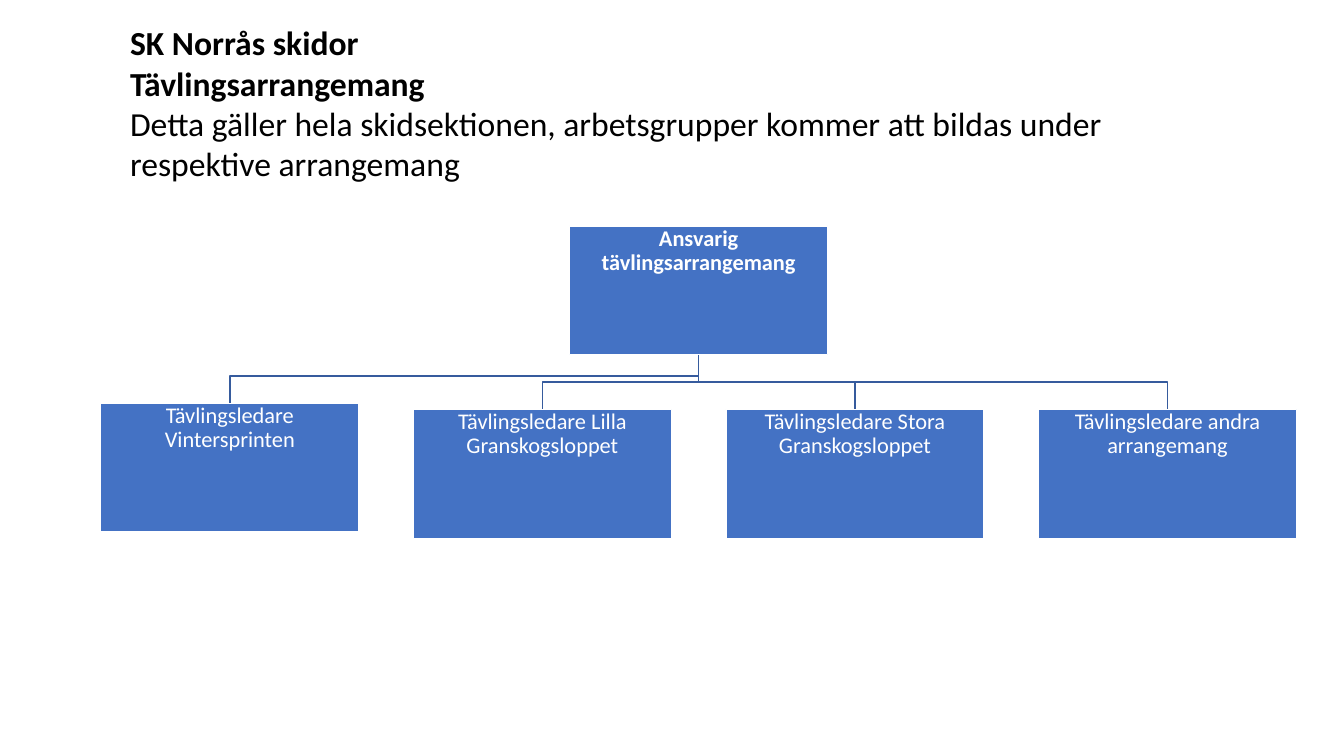
from pptx import Presentation
from pptx.dml.color import RGBColor
from pptx.enum.shapes import MSO_SHAPE
from pptx.enum.text import MSO_ANCHOR, MSO_AUTO_SIZE, PP_ALIGN
from pptx.util import Inches, Pt

COLOURS = {"box": "4472C4", "branch": "365B9D", "white": "FFFFFF", "black": "000000"}
BOX_WIDTH, BOX_HEIGHT = 2.56, 1.28
BRANCH_DROP = 0.27

HEADING = [
    ("SK Norrås skidor", True),
    ("Tävlingsarrangemang", True),
    ("Detta gäller hela skidsektionen, arbetsgrupper kommer att bildas "
     "under respektive arrangemang", False),
]
MANAGER = "Ansvarig tävlingsarrangemang"
LEADERS = [
    "Tävlingsledare Vintersprinten",
    "Tävlingsledare Lilla Granskogsloppet",
    "Tävlingsledare Stora Granskogsloppet",
    "Tävlingsledare andra arrangemang",
]


def colour(name):
    return RGBColor.from_string(COLOURS[name])


def write(para, text, size, ink, bold=False, align=PP_ALIGN.LEFT, spacing=1.0, after=0):
    para.alignment = align
    para.line_spacing = spacing
    para.space_before = Pt(0)
    para.space_after = Pt(after)
    span = para.add_run()
    span.text = text
    span.font.name = "Calibri"
    span.font.size = Pt(size)
    span.font.bold = bold
    span.font.color.rgb = colour(ink)


def add_heading(page, left, top, width, height):
    title = page.shapes.title
    title.left, title.top = Inches(left), Inches(top)
    title.width, title.height = Inches(width), Inches(height)
    frame = title.text_frame
    frame.word_wrap = True
    frame.auto_size = MSO_AUTO_SIZE.NONE
    frame.vertical_anchor = MSO_ANCHOR.TOP
    for index, (text, bold) in enumerate(HEADING):
        para = frame.add_paragraph() if index else frame.paragraphs[0]
        write(para, text, 24, "black", bold=bold)


def add_role(page, left, top, text, bold=False):
    box = page.shapes.add_shape(MSO_SHAPE.RECTANGLE, Inches(left), Inches(top),
                                Inches(BOX_WIDTH), Inches(BOX_HEIGHT))
    box.shadow.inherit = False
    box.fill.solid()
    box.fill.fore_color.rgb = colour("box")
    box.line.color.rgb = colour("white")
    box.line.width = Pt(1)
    frame = box.text_frame
    frame.word_wrap = True
    frame.vertical_anchor = MSO_ANCHOR.TOP
    frame.margin_left = frame.margin_right = Inches(0.01)
    frame.margin_top = frame.margin_bottom = Inches(0.01)
    write(frame.paragraphs[0], text, 16, "white", bold=bold,
          align=PP_ALIGN.CENTER, spacing=0.9, after=5.6)


def add_branch(page, start_x, start_y, end_x, end_y):
    """Draw a line that goes down, across and down again to a lower box."""
    turn_y = end_y - BRANCH_DROP
    corners = [(start_x, turn_y), (end_x, turn_y), (end_x, end_y)]
    builder = page.shapes.build_freeform(Inches(start_x), Inches(start_y))
    builder.add_line_segments([(Inches(x), Inches(y)) for x, y in corners], close=False)
    branch = builder.convert_to_shape()
    branch.shadow.inherit = False
    branch.fill.background()
    branch.line.color.rgb = colour("branch")
    branch.line.width = Pt(1)


def add_chart_of_roles(page, left, top, pitch=3.1):
    """Place the manager centred above a row of leaders."""
    manager_left = left + pitch * (len(LEADERS) - 1) / 2
    centre = BOX_WIDTH / 2
    # The first leader sits slightly higher than the others.
    leaders = [(left + index * pitch, top + (1.82 if index else 1.76), text)
               for index, text in enumerate(LEADERS)]
    for x, y, _ in reversed(leaders):
        add_branch(page, manager_left + centre, top + BOX_HEIGHT, x + centre, y)
    add_role(page, manager_left, top, MANAGER, bold=True)
    for x, y, text in leaders:
        add_role(page, x, y, text)


def main():
    deck = Presentation()
    deck.slide_width, deck.slide_height = Inches(13.33), Inches(7.5)
    page = deck.slides.add_slide(deck.slide_layouts[5])
    add_heading(page, 1.19, 0.17, 11.15, 1.72)
    add_chart_of_roles(page, 1, 2.24)
    deck.save("out.pptx")


if __name__ == "__main__":
    main()
